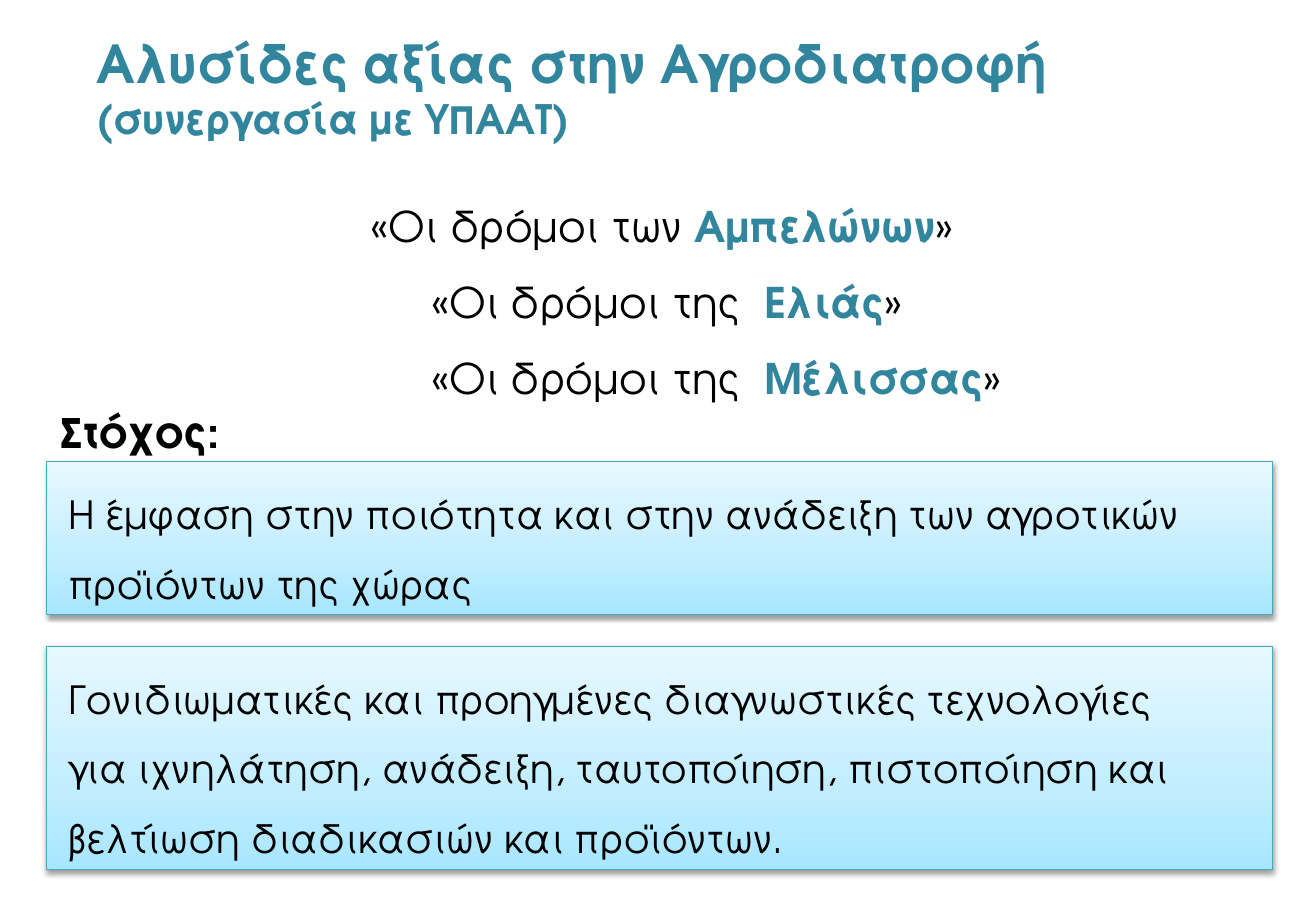
from dataclasses import dataclass

from pptx import Presentation
from pptx.dml.color import RGBColor
from pptx.enum.shapes import MSO_SHAPE
from pptx.enum.text import MSO_ANCHOR, MSO_AUTO_SIZE, PP_ALIGN
from pptx.oxml import parse_xml
from pptx.oxml.ns import nsdecls, qn
from pptx.util import Inches, Pt


@dataclass(frozen=True)
class Theme:
    """Colours, font and type sizes of the slide."""
    font: str = "TeX Gyre Adventor"
    accent: str = "31859C"
    ink: str = "000000"
    border: str = "46AAC5"
    gradient: tuple = ((0, "A7E6FF"), (35, "C1EDFF"), (100, "E7F8FF"))
    title: int = 31
    subtitle: int = 24
    road: int = 25
    goal: int = 26
    body: int = 23


THEME = Theme()


def add_text(p, text, size, color=THEME.ink, bold=False):
    """Add one formatted run to a paragraph."""
    r = p.add_run()
    r.text = text
    r.font.name = THEME.font
    r.font.size = Pt(size)
    r.font.bold = bold
    r.font.color.rgb = RGBColor.from_string(color)


def setup_frame(s, anchor=MSO_ANCHOR.TOP):
    """Make the text frame of a shape wrap at a fixed size and return it."""
    tf = s.text_frame
    tf.word_wrap = True
    tf.auto_size = MSO_AUTO_SIZE.NONE
    tf.vertical_anchor = anchor
    return tf


def paragraphs(tf, count):
    """Return the first paragraph of a frame followed by new ones."""
    return [tf.paragraphs[0]] + [tf.add_paragraph() for _ in range(count - 1)]


def place_title(slide, box, title, subtitle):
    """Place the title placeholder with its smaller second line."""
    s = slide.shapes.title
    s.left, s.top, s.width, s.height = map(Inches, box)
    p = setup_frame(s).paragraphs[0]
    p.alignment = PP_ALIGN.LEFT
    add_text(p, title, THEME.title, THEME.accent, True)
    p.add_line_break()
    add_text(p, subtitle, THEME.subtitle, THEME.accent, True)


def add_roads(slide, box, roads):
    """List the named roads, each with its own indent."""
    tf = setup_frame(slide.shapes.add_textbox(*map(Inches, box)))
    for p, (indent, lead, name) in zip(paragraphs(tf, len(roads)), roads):
        p.line_spacing = 1.5
        p._p.get_or_add_pPr().set("marL", str(Inches(indent)))
        add_text(p, lead, THEME.road)
        add_text(p, name, THEME.road, THEME.accent, True)
        add_text(p, "»", THEME.road)


def add_goal_heading(slide, box, text):
    """Add the bold heading above the panels."""
    tf = setup_frame(slide.shapes.add_textbox(*map(Inches, box)))
    add_text(tf.paragraphs[0], text, THEME.goal, bold=True)


def style_panel(s):
    """Give a panel its gradient, border and soft shadow."""
    s.fill.gradient()
    s.fill.gradient_angle = 90
    stops = "".join(
        f'<a:gs pos="{pos * 1000}"><a:srgbClr val="{color}"/></a:gs>'
        for pos, color in THEME.gradient)
    sp = s._element.spPr
    old = sp.find(qn("a:gradFill")).find(qn("a:gsLst"))
    old.getparent().replace(
        old, parse_xml(f'<a:gsLst {nsdecls("a")}>{stops}</a:gsLst>'))
    s.line.color.rgb = RGBColor.from_string(THEME.border)
    s.line.width = Pt(0.75)
    s.shadow.inherit = False
    sp.find(qn("a:effectLst")).append(parse_xml(
        f'<a:outerShdw {nsdecls("a")} blurRad="{Pt(3.1)}" dist="{Pt(1.6)}" '
        'dir="5400000" rotWithShape="0"><a:srgbClr val="000000">'
        '<a:alpha val="38000"/></a:srgbClr></a:outerShdw>'))


def add_panel(slide, box, lines):
    """Add a gradient panel with widely spaced lines of text."""
    s = slide.shapes.add_shape(MSO_SHAPE.RECTANGLE, *map(Inches, box))
    style_panel(s)
    tf = setup_frame(s)
    tf.margin_left = Inches(0.18)
    for p, line in zip(paragraphs(tf, len(lines)), lines):
        p.alignment = PP_ALIGN.LEFT
        p.line_spacing = 1.5
        add_text(p, line, THEME.body)


def main():
    """Build the slide and save it."""
    prs = Presentation()
    prs.slide_width, prs.slide_height = Inches(10.83), Inches(7.5)
    slide = prs.slides.add_slide(prs.slide_layouts[5])
    place_title(slide, (0.69, 0.21, 9.13, 1.03),
                "Αλυσίδες αξίας στην Αγροδιατροφή", "(συνεργασία με ΥΠΑΑΤ)")
    add_roads(slide, (1.87, 1.39, 7.24, 1.99), (
        (1.08, "«Οι δρόμοι των ", "Αμπελώνων"),
        (1.58, "«Οι δρόμοι της  ", "Ελιάς"),
        (1.58, "«Οι δρόμοι της  ", "Μέλισσας")))
    add_panel(slide, (0.38, 3.8, 10.09, 1.26), (
        "Η έμφαση στην ποιότητα και στην ανάδειξη των αγροτικών",
        "προϊόντων της χώρας"))
    add_panel(slide, (0.38, 5.32, 10.09, 1.84), (
        "Γονιδιωματικές και προηγμένες διαγνωστικές τεχνολογίες",
        "για ιχνηλάτηση, ανάδειξη, ταυτοποίηση, πιστοποίηση και",
        "βελτίωση διαδικασιών και προϊόντων."))
    add_goal_heading(slide, (0.41, 3.28, 3.31, 0.54), "Στόχος:")
    prs.save("out.pptx")


if __name__ == "__main__":
    main()
